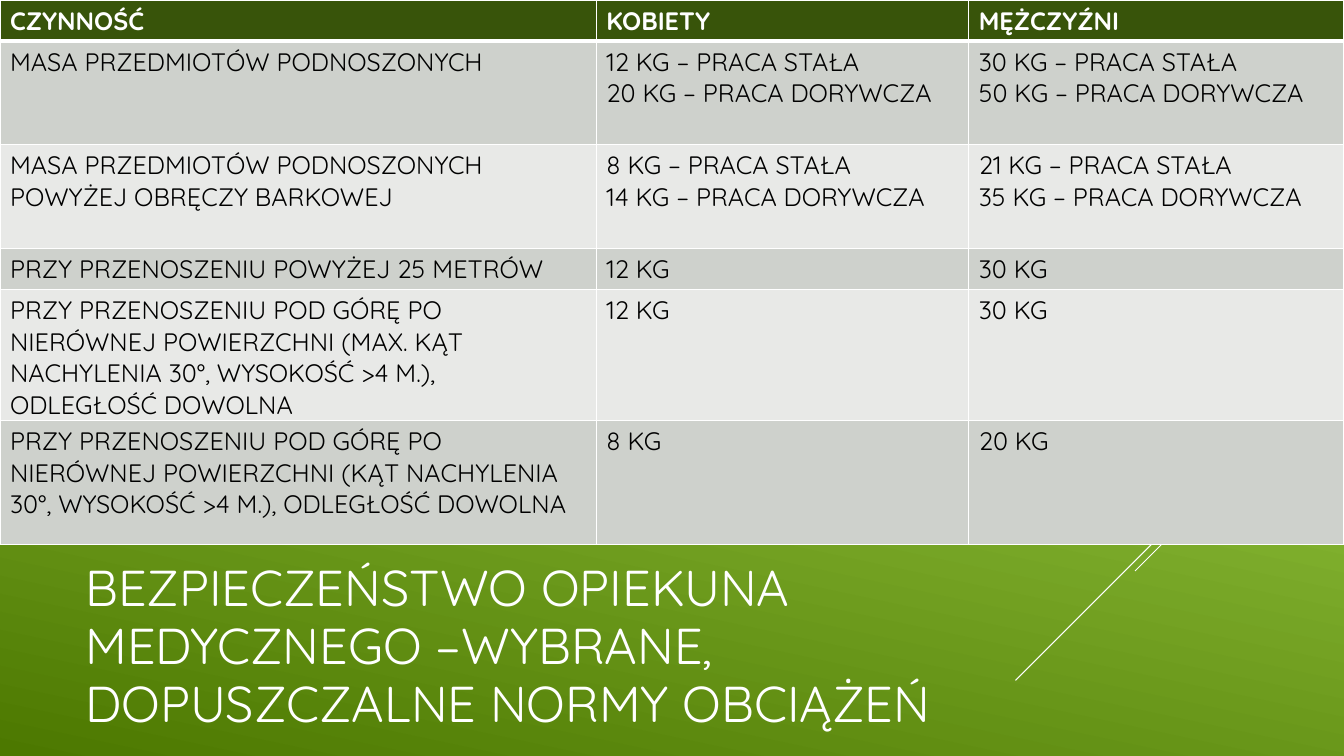
import pptx
import pptx.dml.color
import pptx.enum.shapes
import pptx.enum.text
import pptx.oxml
import pptx.oxml.ns
import pptx.util

Pt = pptx.util.Pt

TITLE = "BEZPIECZEŃSTWO OPIEKUNA MEDYCZNEGO –WYBRANE, DOPUSZCZALNE NORMY OBCIĄŻEŃ"
HEADINGS = (["CZYNNOŚĆ"], ["KOBIETY"], ["MĘŻCZYŹNI"])
LIMITS = [
    (["MASA PRZEDMIOTÓW PODNOSZONYCH"],
     ["12 KG – PRACA STAŁA", "20 KG – PRACA DORYWCZA"],
     ["30 KG – PRACA STAŁA", "50 KG – PRACA DORYWCZA"]),
    (["MASA PRZEDMIOTÓW PODNOSZONYCH POWYŻEJ OBRĘCZY BARKOWEJ"],
     ["8 KG – PRACA STAŁA", "14 KG – PRACA DORYWCZA"],
     ["21 KG – PRACA STAŁA", "35 KG – PRACA DORYWCZA"]),
    (["PRZY PRZENOSZENIU POWYŻEJ 25 METRÓW"], ["12 KG"], ["30 KG"]),
    (["PRZY PRZENOSZENIU POD GÓRĘ PO NIERÓWNEJ POWIERZCHNI (MAX. KĄT "
      "NACHYLENIA 30°, WYSOKOŚĆ >4 M.), ODLEGŁOŚĆ DOWOLNA"], ["12 KG"], ["30 KG"]),
    (["PRZY PRZENOSZENIU POD GÓRĘ PO NIERÓWNEJ POWIERZCHNI (KĄT "
      "NACHYLENIA 30°, WYSOKOŚĆ >4 M.), ODLEGŁOŚĆ DOWOLNA"], ["8 KG"], ["20 KG"]),
]

THEME = {
    "font": "Quicksand", "title_size": 36, "table_size": 18,
    "light": "FFFFFF", "dark": "000000",
    "header": "38540A", "bands": ("CED1CC", "E8E9E7"),
    "gradient": ((0.1, "ACDF55"), (1, "4C7800")), "gradient_angle": 258,
}
SLIDE_WIDTH, SLIDE_HEIGHT = 960, 540
COLUMN_WIDTHS = (426, 266, 268)
ROW_HEIGHTS = (29.2, 74.2, 74.2, 29.2, 88.6, 88.6)
DIAGONALS = ((251.4, 234.6), (258.6, 149.2))


def rgb(code):
    return pptx.dml.color.RGBColor.from_string(code)


def add_run(paragraph, words, size, color, bold=False):
    run = paragraph.add_run()
    run.text = words
    run.font.name = THEME["font"]
    run.font.size = Pt(size)
    run.font.bold = bold
    run.font.color.rgb = rgb(color)


def set_borders(cell, widths):
    properties = cell._tc.get_or_add_tcPr()
    for place, (side, width) in enumerate(widths.items()):
        border = pptx.oxml.parse_xml(
            f'<a:ln{side} {pptx.oxml.ns.nsdecls("a")} w="{Pt(width)}"><a:solidFill>'
            f'<a:srgbClr val="{THEME["light"]}"/></a:solidFill></a:ln{side}>')
        properties.insert(place, border)


def add_background(slide):
    fill = slide.background.fill
    fill.gradient()
    fill.gradient_angle = THEME["gradient_angle"]
    for stop, (position, color) in zip(fill.gradient_stops, THEME["gradient"]):
        stop.position = position
        stop.color.rgb = rgb(color)


def add_diagonals(slide):
    for top, reach in DIAGONALS:
        diagonal = slide.shapes.add_connector(
            pptx.enum.shapes.MSO_CONNECTOR.STRAIGHT, Pt(SLIDE_WIDTH), Pt(top),
            Pt(SLIDE_WIDTH - reach), Pt(top + reach))
        diagonal.line.color.rgb = rgb(THEME["light"])
        diagonal.line.width = Pt(0.75)
        diagonal._element.spPr.append(pptx.oxml.parse_xml(
            f'<a:effectLst {pptx.oxml.ns.nsdecls("a")}/>'))


def add_title(slide):
    frame = slide.shapes.add_textbox(Pt(54), Pt(393), Pt(672), Pt(139)).text_frame
    frame.word_wrap = True
    frame.vertical_anchor = pptx.enum.text.MSO_ANCHOR.MIDDLE
    frame.paragraphs[0].line_spacing = 0.96
    add_run(frame.paragraphs[0], TITLE, THEME["title_size"], THEME["light"])


def add_limits(slide):
    rows = [HEADINGS, *LIMITS]
    table = slide.shapes.add_table(
        len(rows), len(HEADINGS), Pt(0), Pt(0),
        Pt(sum(COLUMN_WIDTHS)), Pt(sum(ROW_HEIGHTS))).table
    for column, width in zip(table.columns, COLUMN_WIDTHS):
        column.width = Pt(width)
    for r, entries in enumerate(rows):
        table.rows[r].height = Pt(ROW_HEIGHTS[r])
        header = r == 0
        shade = THEME["header"] if header else THEME["bands"][(r - 1) % 2]
        ink = THEME["light"] if header else THEME["dark"]
        borders = {"L": 1, "R": 1, "T": 3 if r == 1 else 1, "B": 3 if header else 1}
        for c, lines in enumerate(entries):
            cell = table.cell(r, c)
            cell.fill.solid()
            cell.fill.fore_color.rgb = rgb(shade)
            set_borders(cell, borders)
            for i, line in enumerate(lines):
                frame = cell.text_frame
                paragraph = frame.add_paragraph() if i else frame.paragraphs[0]
                add_run(paragraph, line, THEME["table_size"], ink, header)


def main():
    deck = pptx.Presentation()
    deck.slide_width, deck.slide_height = Pt(SLIDE_WIDTH), Pt(SLIDE_HEIGHT)
    slide = deck.slides.add_slide(deck.slide_layouts[6])
    add_background(slide)
    add_diagonals(slide)
    add_title(slide)
    add_limits(slide)
    deck.save("out.pptx")


if __name__ == "__main__":
    main()
